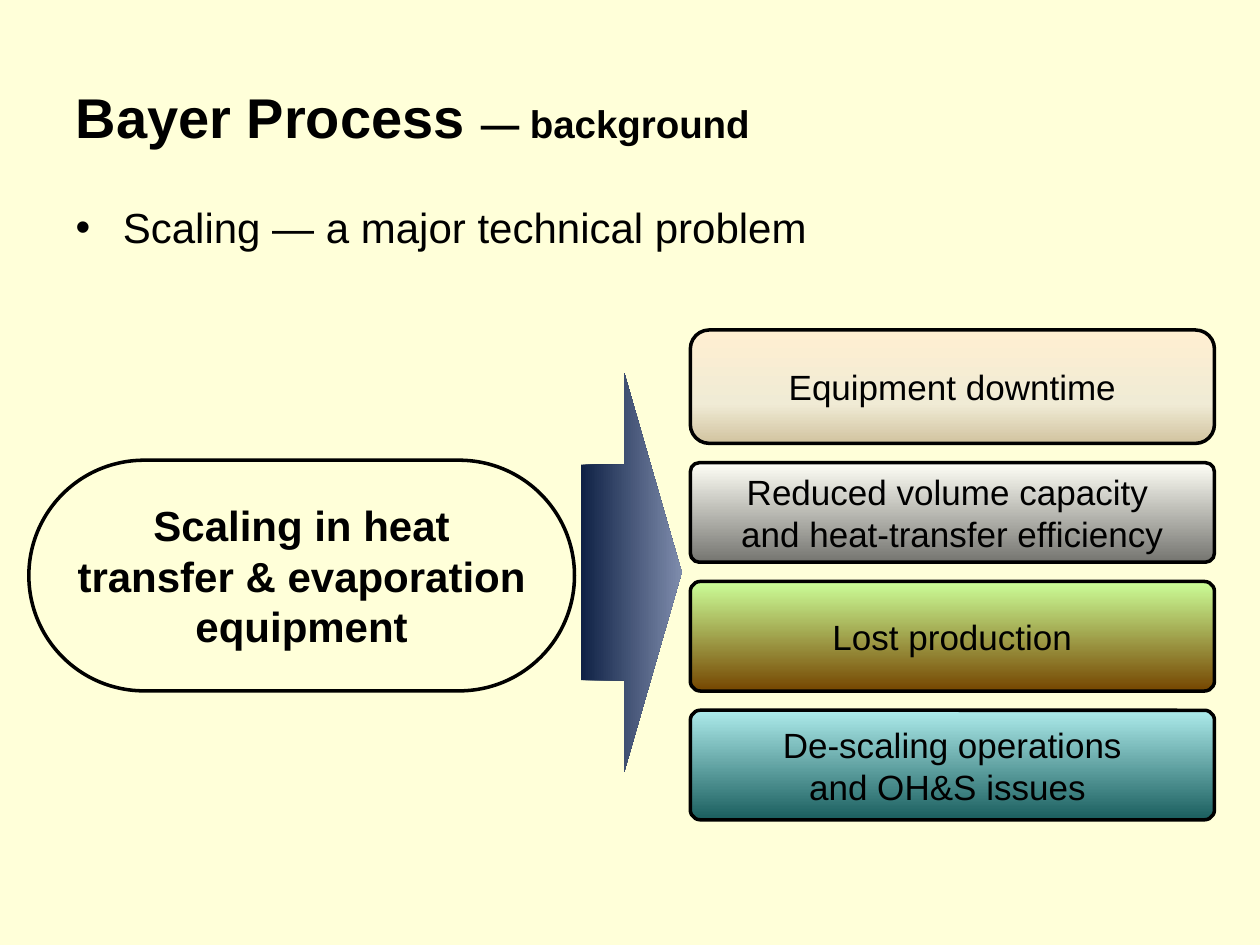
from dataclasses import dataclass

from lxml.etree import SubElement
from pptx import Presentation
from pptx.dml.color import RGBColor
from pptx.enum.shapes import MSO_SHAPE as Shape
from pptx.enum.text import MSO_ANCHOR as Anchor, MSO_AUTO_SIZE as AutoSize, PP_ALIGN as Align
from pptx.oxml.ns import qn
from pptx.util import Pt

FONT = "Arial"
BLACK = RGBColor(0x00, 0x00, 0x00)
CREAM = RGBColor(0xFF, 0xFF, 0xD9)
NAVY = RGBColor(0x0F, 0x21, 0x45)
SLATE = RGBColor(0x7E, 0x8C, 0xAC)
PEACH = RGBColor(0xFF, 0xEF, 0xD1)
IVORY = RGBColor(0xF0, 0xEB, 0xD5)
SAND = RGBColor(0xD1, 0xC3, 0x9F)
WHITE = RGBColor(0xFF, 0xFF, 0xF7)
GREY = RGBColor(0x75, 0x75, 0x70)
LIME = RGBColor(0xCC, 0xFF, 0x99)
BROWN = RGBColor(0x75, 0x46, 0x00)
AQUA = RGBColor(0xAD, 0xEB, 0xEB)
TEAL = RGBColor(0x1A, 0x5E, 0x5E)

BOX_LEFT, BOX_TOP, BOX_WIDTH, BOX_GAP = 394.5, 188.6, 299.5, 11

Stops = tuple[tuple[int, RGBColor], ...]


@dataclass(frozen=True)
class Effect:
    text: str
    height: float
    stops: Stops
    corner: float = 0.091


EFFECTS = (
    Effect("Equipment downtime", 64.8, ((0, PEACH), (65, IVORY), (100, SAND)), 0.167),
    Effect("Reduced volume capacity \nand heat-transfer efficiency", 56.9,
           ((0, WHITE), (100, GREY))),
    Effect("Lost production", 62.6, ((0, LIME), (100, BROWN))),
    Effect("De-scaling operations\nand OH&S issues ", 62.6, ((0, AQUA), (100, TEAL))),
)


def place(sp, left: float, top: float, width: float, height: float) -> None:
    sp.left, sp.top, sp.width, sp.height = map(Pt, (left, top, width, height))


def style_run(r, size: float, bold: bool = False) -> None:
    r.font.name, r.font.size, r.font.bold = FONT, Pt(size), bold
    r.font.color.rgb = BLACK


def set_gradient(sp, stops: Stops, angle: float) -> None:
    """Fill with stops given as (percent, colour); angle runs anticlockwise."""
    sp.fill.gradient()
    sp.fill.gradient_angle = angle
    gs_list = sp._element.spPr.find(qn("a:gradFill")).find(qn("a:gsLst"))
    for gs in list(gs_list):
        gs_list.remove(gs)
    for percent, colour in stops:
        gs = SubElement(gs_list, qn("a:gs"), pos=str(percent * 1000))
        SubElement(gs, qn("a:srgbClr"), val=str(colour))


def add_rounded(slide, box: tuple[float, float, float, float], corner: float,
                text: str, size: float, bold: bool = False, wrap: bool = False):
    sp = slide.shapes.add_shape(Shape.ROUNDED_RECTANGLE, *map(Pt, box))
    sp.adjustments[0] = corner
    sp.shadow.inherit = False
    sp.fill.background()
    sp.line.color.rgb, sp.line.width = BLACK, Pt(2)
    tf = sp.text_frame
    tf.text = text
    tf.word_wrap, tf.vertical_anchor = wrap, Anchor.MIDDLE
    for p in tf.paragraphs:
        p.alignment = Align.CENTER
        for r in p.runs:
            style_run(r, size, bold)
    return sp


def add_heading(slide) -> None:
    title = slide.shapes.title
    place(title, 36, 21.6, 648, 90)
    tf = title.text_frame
    tf.auto_size, tf.vertical_anchor = AutoSize.NONE, Anchor.MIDDLE
    p = tf.paragraphs[0]
    p.alignment = Align.LEFT
    for text, size in (("Bayer Process ", 32), ("— background", 22)):
        r = p.add_run()
        r.text = text
        style_run(r, size, bold=True)


def add_bullet(slide) -> None:
    body = slide.placeholders[1]
    place(body, 36, 111.6, 653, 62.6)
    tf = body.text_frame
    tf.text = "Scaling — a major technical problem"
    tf.auto_size = AutoSize.NONE
    p = tf.paragraphs[0]
    p.space_before = Pt(0)
    pPr = p._p.get_or_add_pPr()
    pPr.set("marL", str(Pt(27)))
    pPr.set("indent", str(Pt(-27)))
    SubElement(pPr, qn("a:buChar"), char="•")
    style_run(p.runs[0], 24)


def add_arrow(slide) -> None:
    sp = slide.shapes.add_shape(Shape.RIGHT_ARROW, Pt(332), Pt(213), Pt(57.6), Pt(228.2))
    sp.adjustments[0], sp.adjustments[1] = 0.54, 0.57
    sp.shadow.inherit = False
    sp.line.fill.background()
    set_gradient(sp, ((0, NAVY), (100, SLATE)), 0)


def main() -> None:
    prs = Presentation()
    prs.slide_width, prs.slide_height = Pt(720), Pt(540)
    slide = prs.slides.add_slide(prs.slide_layouts[1])
    slide.background.fill.solid()
    slide.background.fill.fore_color.rgb = CREAM

    add_heading(slide)
    add_bullet(slide)
    add_arrow(slide)
    add_rounded(slide, (16.5, 263, 311.8, 131.8), 0.5,
                "Scaling in heat transfer & evaporation equipment", 24, bold=True, wrap=True)
    top = BOX_TOP
    for effect in EFFECTS:
        sp = add_rounded(slide, (BOX_LEFT, top, BOX_WIDTH, effect.height),
                         effect.corner, effect.text, 20)
        set_gradient(sp, effect.stops, 270)
        top += effect.height + BOX_GAP

    prs.save("out.pptx")


if __name__ == "__main__":
    main()
